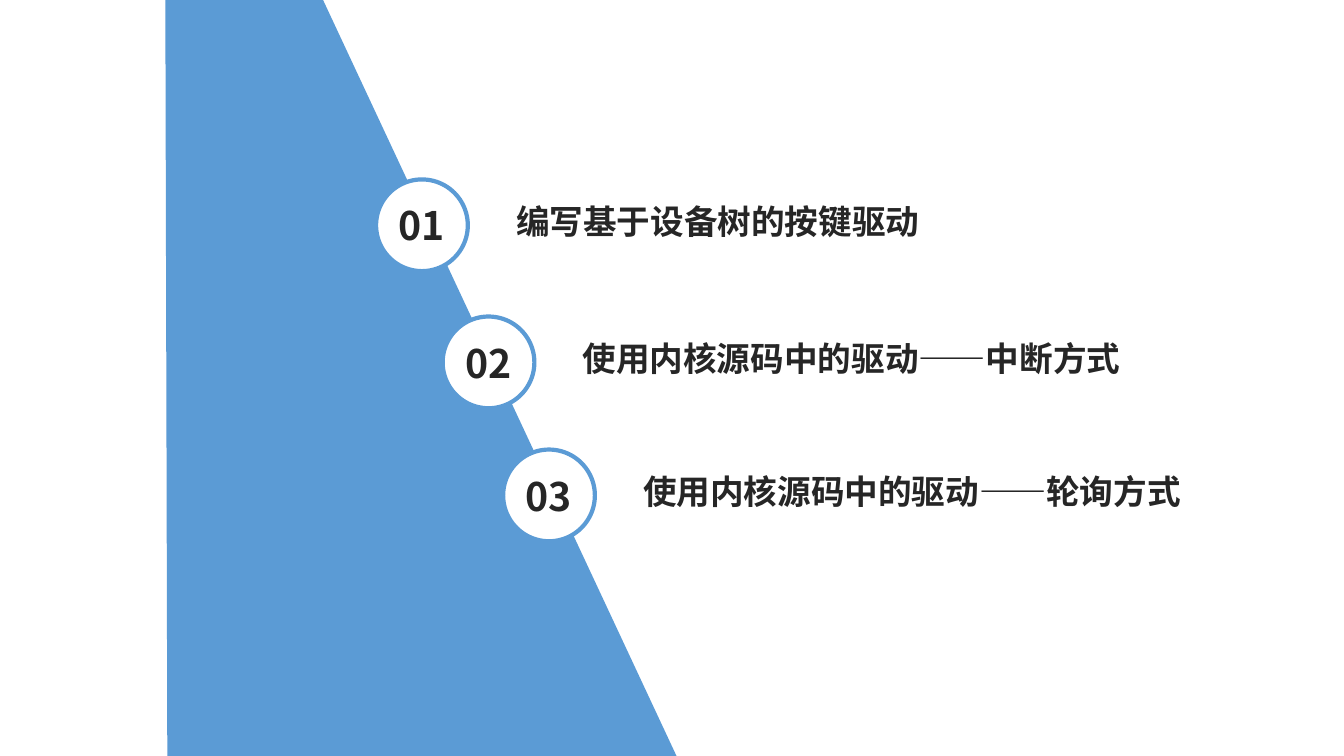
from lxml import etree
from pptx import Presentation
from pptx.dml.color import RGBColor
from pptx.enum.shapes import MSO_SHAPE
from pptx.enum.text import MSO_ANCHOR, PP_ALIGN
from pptx.oxml.ns import qn
from pptx.util import Inches, Pt

OVAL = MSO_SHAPE.OVAL
MIDDLE = MSO_ANCHOR.MIDDLE
LEFT, CENTER = PP_ALIGN.LEFT, PP_ALIGN.CENTER


def color(value):
    return RGBColor.from_string(value)


class AgendaSlide:
    font = "Noto Sans CJK SC"
    blue, white, ink = "5B9BD5", "FFFFFF", "262626"

    def __init__(self, prs):
        self.s = prs.slides.add_slide(prs.slide_layouts[6])

    def set_text(self, tf, text, size, align):
        p = tf.paragraphs[0]
        p.text = text
        p.alignment = align
        p.font.name = self.font
        p.font.size = Pt(size)
        p.font.bold = True
        p.font.color.rgb = color(self.ink)
        ea = etree.SubElement(p._p.pPr.find(qn("a:defRPr")), qn("a:ea"))
        ea.set("typeface", self.font)

    def panel(self, points):
        corners = [(Inches(x), Inches(y)) for x, y in points]
        builder = self.s.shapes.build_freeform(*corners[0])
        builder.add_line_segments(corners[1:], close=True)
        sp = builder.convert_to_shape()
        sp.shadow.inherit = False
        sp.fill.solid()
        sp.fill.fore_color.rgb = color(self.blue)
        sp.line.fill.background()

    def badge(self, x, y, size, text):
        sp = self.s.shapes.add_shape(OVAL, Inches(x), Inches(y), Inches(size), Inches(size))
        sp.shadow.inherit = False
        sp.fill.solid()
        sp.fill.fore_color.rgb = color(self.white)
        sp.line.color.rgb = color(self.blue)
        sp.line.width = Pt(3)
        tf = sp.text_frame
        tf.margin_left = tf.margin_right = tf.margin_top = tf.margin_bottom = 0
        tf.vertical_anchor = MIDDLE
        self.set_text(tf, text, 28, CENTER)

    def label(self, x, y, w, h, text):
        sp = self.s.shapes.add_textbox(Inches(x), Inches(y), Inches(w), Inches(h))
        sp.text_frame.word_wrap = True
        self.set_text(sp.text_frame, text, 24, LEFT)


def main():
    prs = Presentation()
    prs.slide_width, prs.slide_height = Inches(13.33), Inches(7.5)
    agenda = AgendaSlide(prs)
    agenda.panel([(6.71, 7.5), (3.2, -0.01), (1.64, -0.01), (1.66, 7.54)])
    topics = [
        (3.73, 1.78, "编写基于设备树的按键驱动"),
        (4.39, 3.14, "使用内核源码中的驱动——中断方式"),
        (4.99, 4.46, "使用内核源码中的驱动——轮询方式"),
    ]
    for number, (x, y, text) in enumerate(topics, 1):
        agenda.badge(x, y, 0.91, f"{number:02}")
        agenda.label(x + 1.29, y + 0.16, 6, 0.5, text)
    prs.save("out.pptx")


if __name__ == "__main__":
    main()
